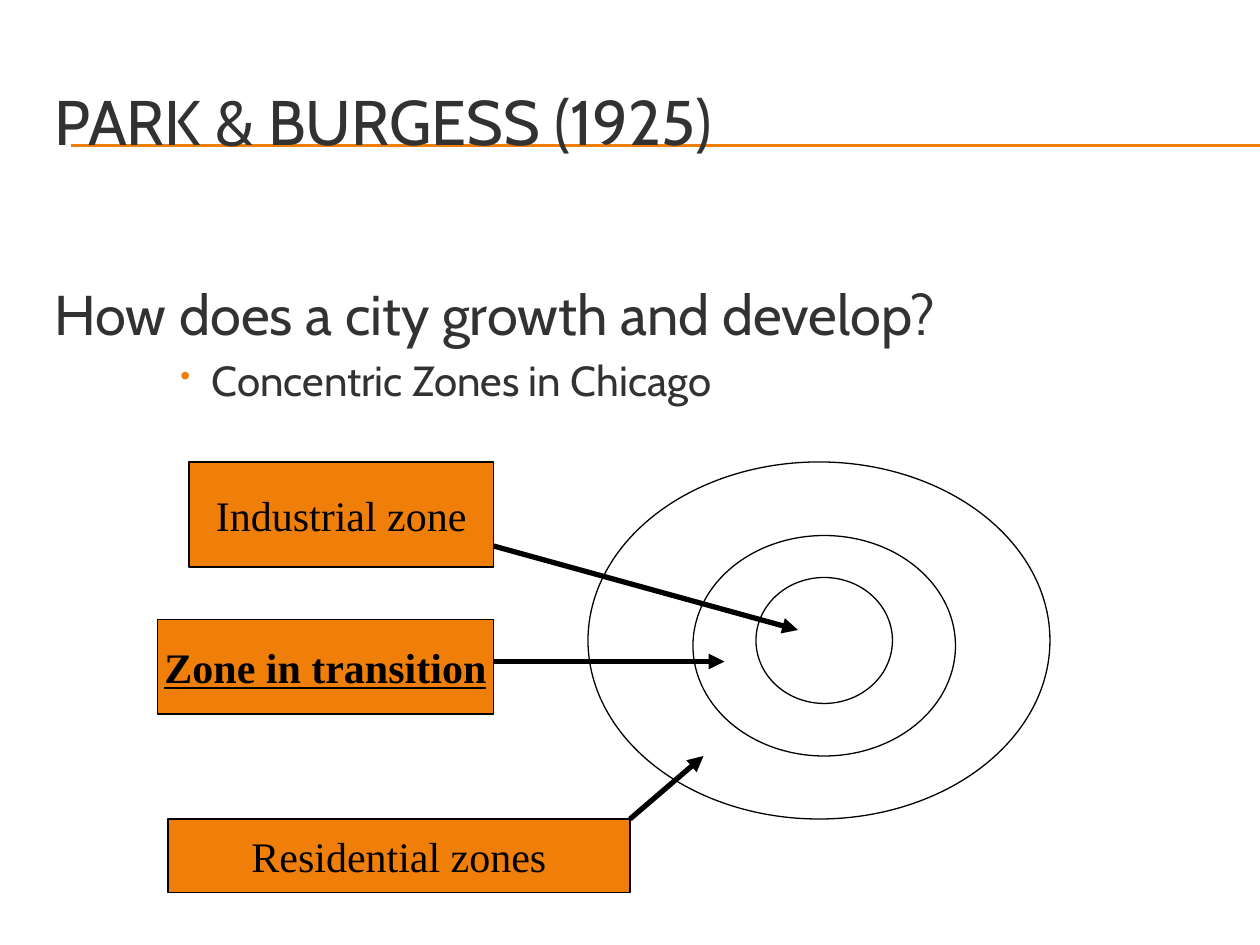
import pptx
import pptx.dml.color
import pptx.enum.shapes
import pptx.enum.text
import pptx.oxml
import pptx.oxml.ns
import pptx.util
from lxml import etree

Pt = pptx.util.Pt
RGBColor = pptx.dml.color.RGBColor
Shapes = pptx.enum.shapes.MSO_SHAPE
Align = pptx.enum.text.PP_ALIGN
Anchor = pptx.enum.text.MSO_ANCHOR

ORANGE = RGBColor(0xF0, 0x7F, 0x09)
CHARCOAL = RGBColor(0x32, 0x32, 0x32)
BLACK = RGBColor(0, 0, 0)
WHITE = RGBColor(0xFF, 0xFF, 0xFF)

TITLE_FONT = {"name": "Cabin", "size": Pt(36), "color": CHARCOAL}
QUESTION_FONT = {"name": "Cabin", "size": Pt(32), "color": CHARCOAL}
ANSWER_FONT = {"name": "Cabin", "size": Pt(24), "color": CHARCOAL}
ZONE_FONT = {"name": "Times New Roman", "size": Pt(24), "color": BLACK}
KEY_ZONE_FONT = {**ZONE_FONT, "bold": True, "underline": True}

RINGS = [
    (336, 264, 264, 204),
    (396, 306, 150, 126),
    (432, 330, 78, 72),
]
ZONES = [
    ("Industrial zone", (108, 264, 174, 60), ZONE_FONT),
    ("Zone in transition", (90, 354, 192, 54), KEY_ZONE_FONT),
    ("Residential zones", (96, 468, 264, 42), ZONE_FONT),
]
ARROWS = [
    (282, 312, 456, 360),
    (282, 378, 414, 378),
    (360, 468, 402, 432),
]


def points(values):
    return [Pt(value) for value in values]


def write(paragraph, text, font_format):
    run = paragraph.add_run()
    run.text = text
    for name, value in font_format.items():
        if name == "color":
            run.font.color.rgb = value
        else:
            setattr(run.font, name, value)


def add_title(slide, text):
    title = slide.shapes.title
    title.left, title.top, title.width, title.height = points((24, 36, 684, 66))
    frame = title.text_frame
    frame.vertical_anchor = Anchor.MIDDLE
    frame.paragraphs[0].alignment = Align.LEFT
    write(frame.paragraphs[0], text, TITLE_FONT)
    return title


def set_indent(paragraph, margin, indent):
    properties = paragraph._p.get_or_add_pPr()
    properties.set("marL", str(Pt(margin)))
    properties.set("indent", str(Pt(indent)))
    return properties


def add_bullet(properties, color):
    bullet_color = etree.SubElement(properties, pptx.oxml.ns.qn("a:buClr"))
    etree.SubElement(bullet_color, pptx.oxml.ns.qn("a:srgbClr"), val=str(color))
    etree.SubElement(properties, pptx.oxml.ns.qn("a:buSzPct"), val="70000")
    etree.SubElement(properties, pptx.oxml.ns.qn("a:buChar"), char="•")


def add_body(slide):
    frame = slide.shapes.add_textbox(*points((24, 156, 642, 360))).text_frame
    frame.word_wrap = True
    question = frame.paragraphs[0]
    question.space_before = Pt(6.4)
    set_indent(question, 27, -27)
    write(question, "How does a city growth and develop?", QUESTION_FONT)
    answer = frame.add_paragraph()
    answer.level = 2
    answer.space_before = Pt(4.8)
    add_bullet(set_indent(answer, 90, -18), ORANGE)
    write(answer, "Concentric Zones in Chicago", ANSWER_FONT)


def add_outlined_shape(slide, kind, box, fill):
    shape = slide.shapes.add_shape(kind, *points(box))
    shape.shadow.inherit = False
    shape.fill.solid()
    shape.fill.fore_color.rgb = fill
    shape.line.color.rgb = BLACK
    shape.line.width = Pt(0.75)
    return shape


def add_zone(slide, text, box, font_format):
    frame = add_outlined_shape(slide, Shapes.RECTANGLE, box, ORANGE).text_frame
    frame.word_wrap = False
    frame.vertical_anchor = Anchor.MIDDLE
    frame.paragraphs[0].alignment = Align.CENTER
    write(frame.paragraphs[0], text, font_format)


def add_line(slide, ends, color, width):
    line = slide.shapes.add_connector(
        pptx.enum.shapes.MSO_CONNECTOR.STRAIGHT, *points(ends)
    )
    line.line.color.rgb = color
    line.line.width = Pt(width)
    etree.SubElement(line.element.spPr, pptx.oxml.ns.qn("a:effectLst"))
    return line


def add_arrow(slide, ends):
    arrow = add_line(slide, ends, BLACK, 3)
    outline = arrow.line._get_or_add_ln()
    etree.SubElement(outline, pptx.oxml.ns.qn("a:tailEnd"), type="triangle")


def main():
    presentation = pptx.Presentation()
    presentation.slide_width, presentation.slide_height = points((720, 540))
    slide = presentation.slides.add_slide(presentation.slide_layouts[5])
    title = add_title(slide, "PARK & BURGESS (1925)")
    for y in (82.8, 83.5):
        rule = add_line(slide, (40.5, y, 720, y), ORANGE, 0.75)
        title.element.addprevious(rule.element)
    add_body(slide)
    for ring in RINGS:
        add_outlined_shape(slide, Shapes.OVAL, ring, WHITE)
    for text, box, font_format in ZONES:
        add_zone(slide, text, box, font_format)
    for ends in ARROWS:
        add_arrow(slide, ends)
    presentation.save("out.pptx")


if __name__ == "__main__":
    main()
